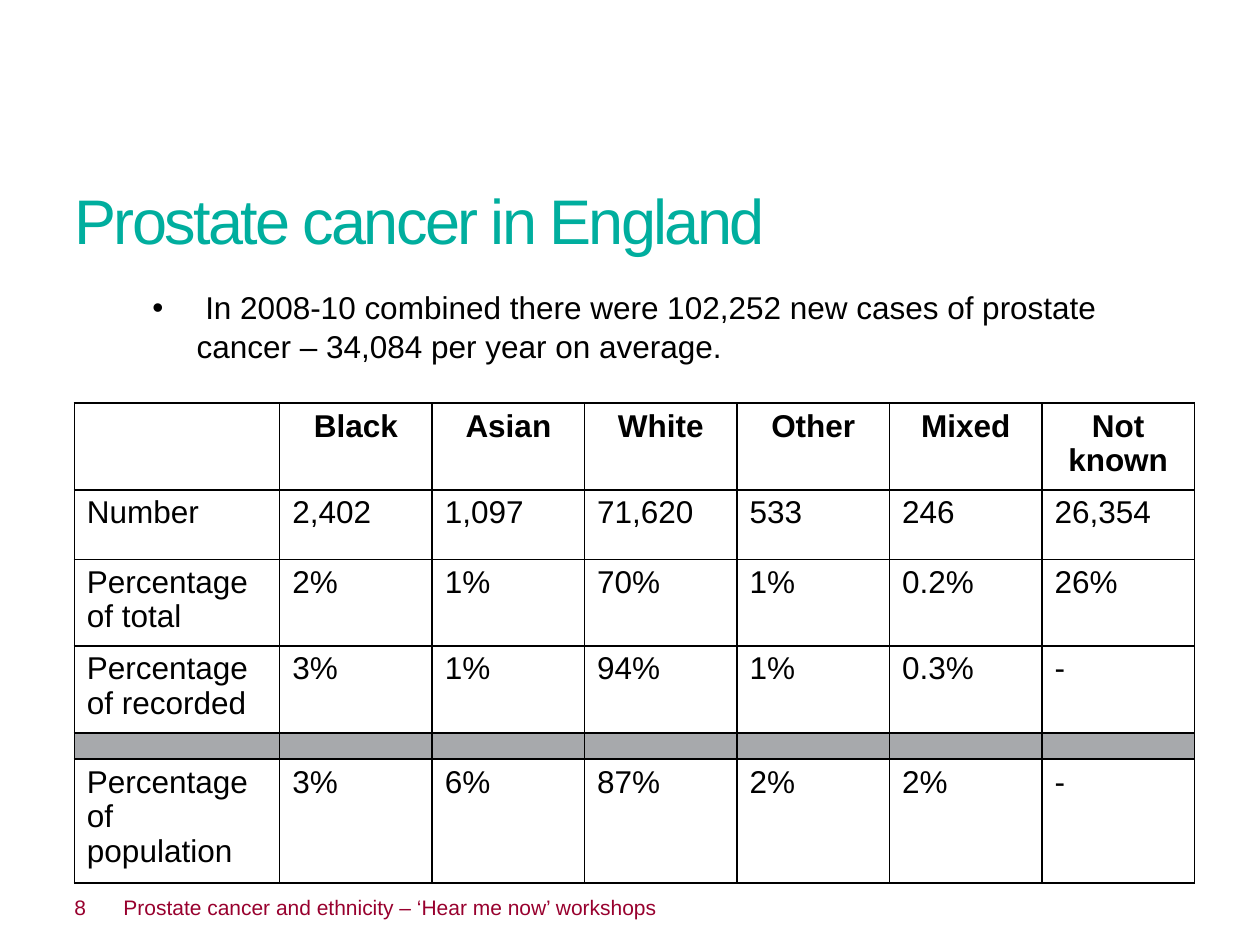
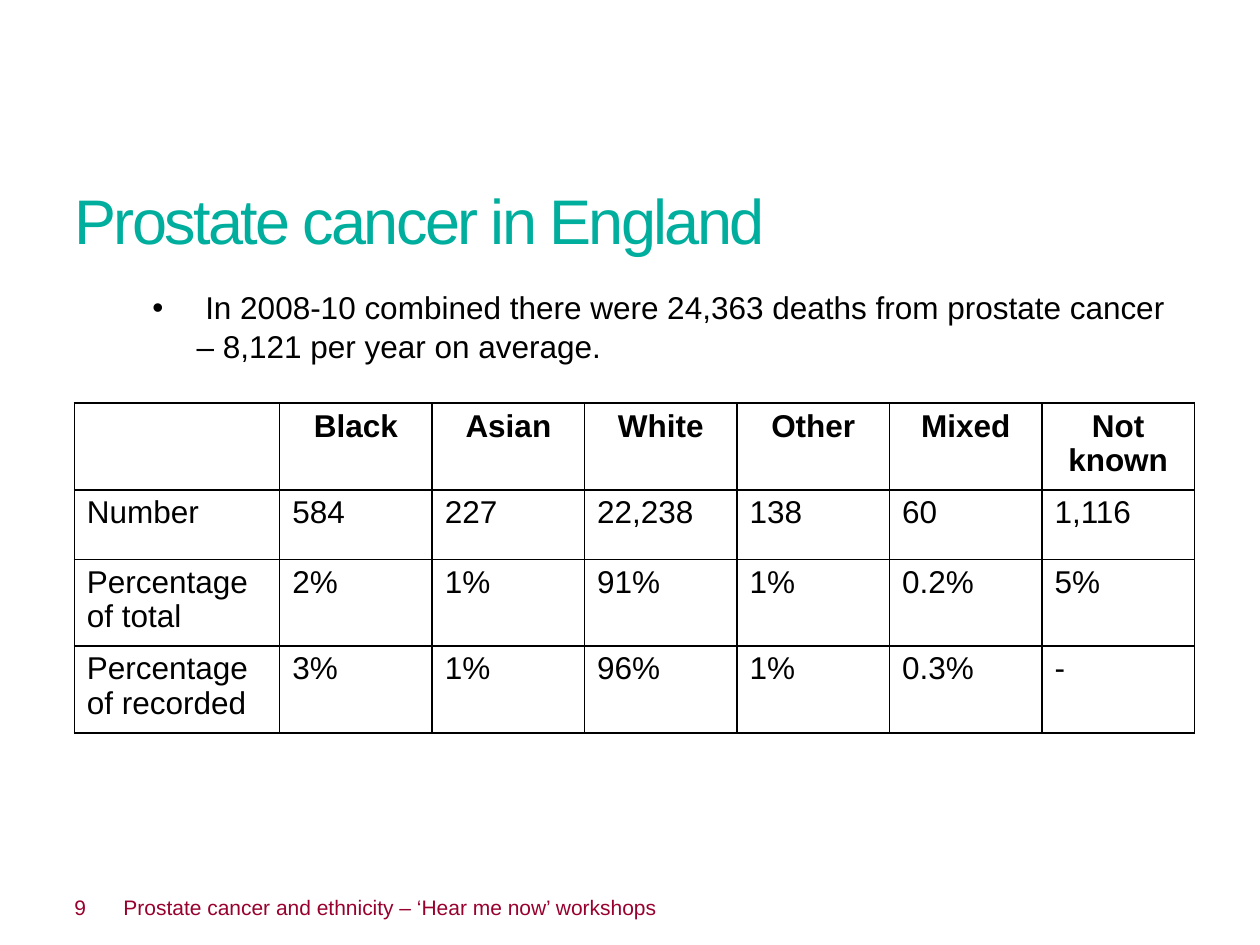
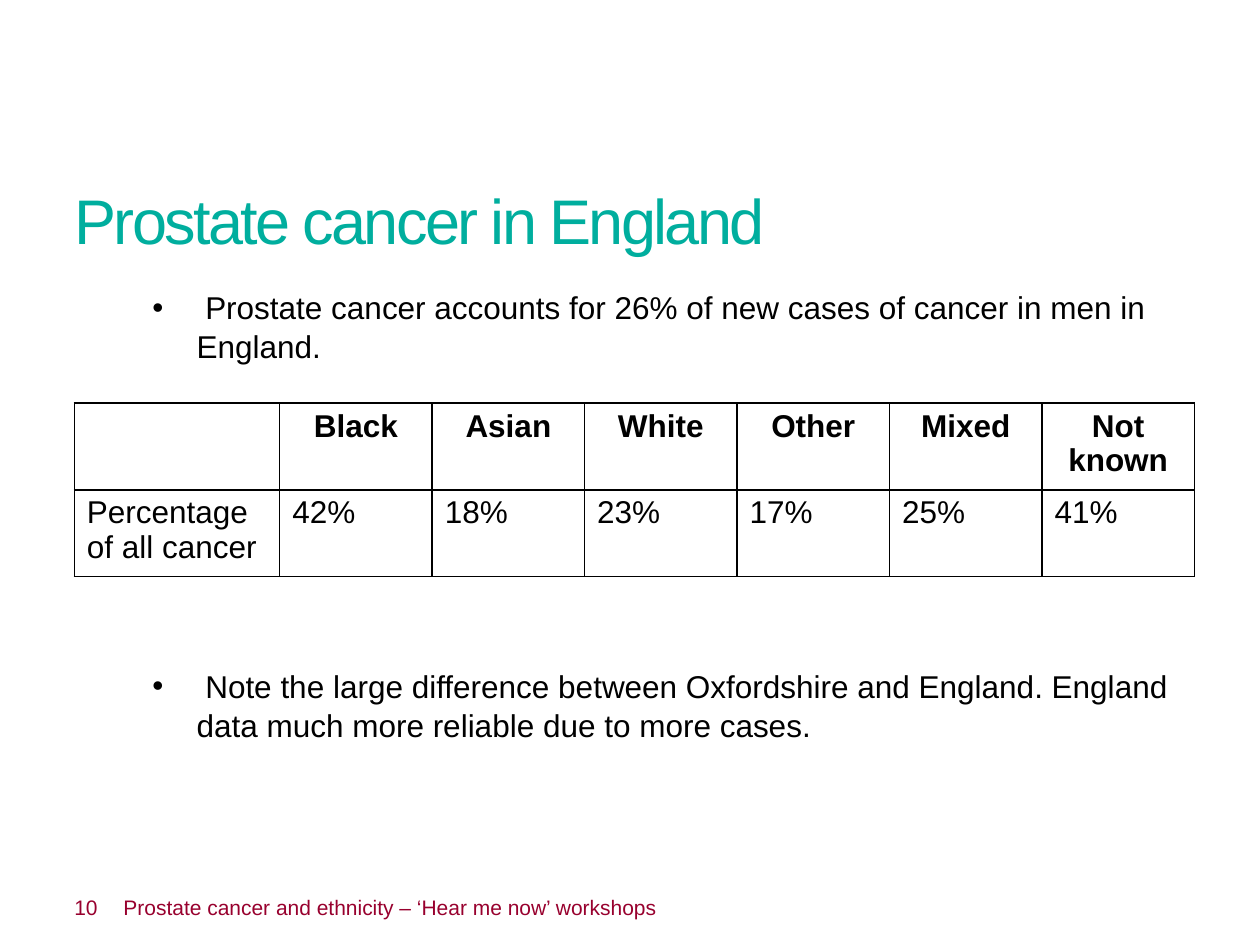
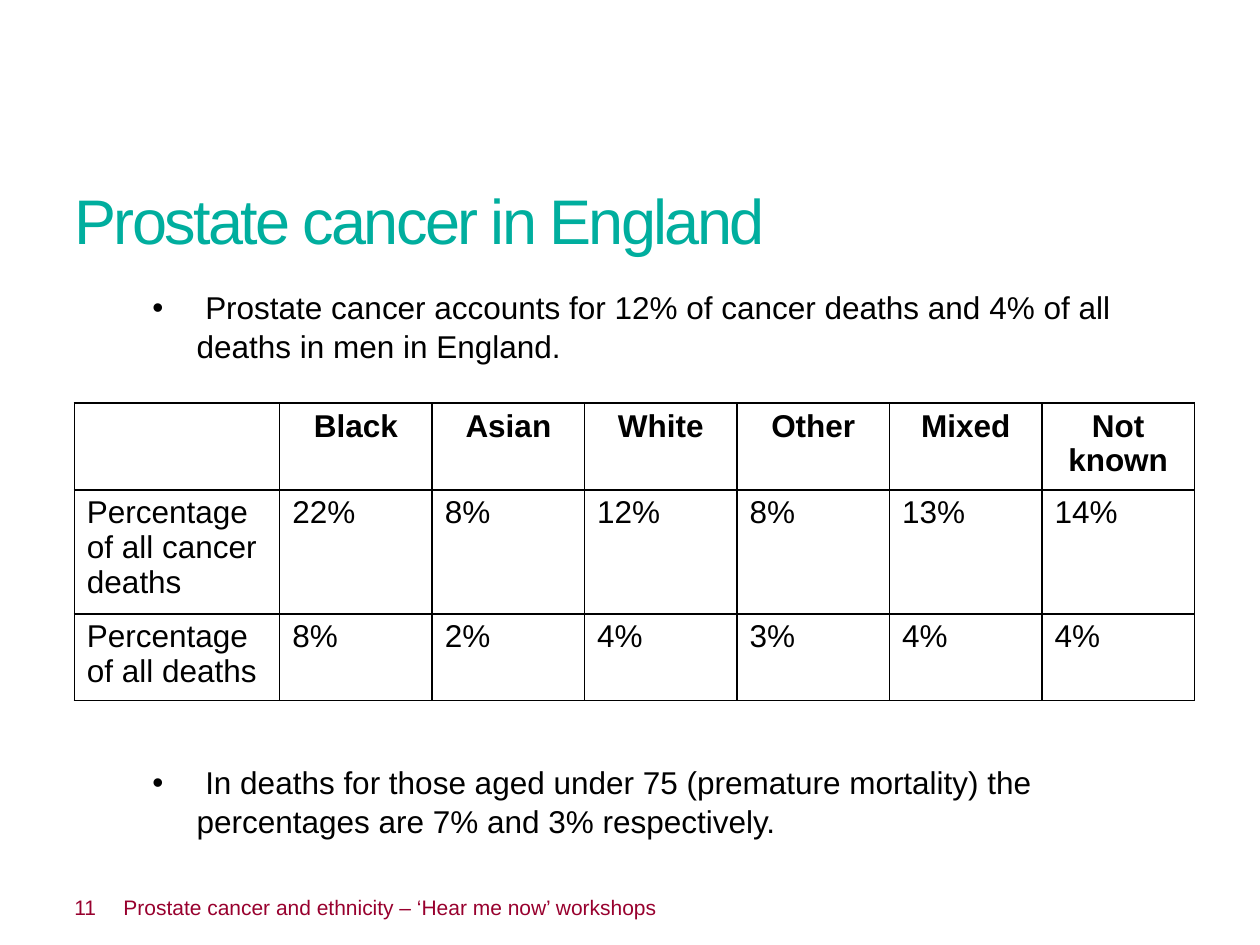
import pptx
import pptx.dml.color
import pptx.enum.shapes
import pptx.enum.text
import pptx.oxml.ns
import pptx.util
from lxml import etree

Inches, Pt = pptx.util.Inches, pptx.util.Pt
RGBColor = pptx.dml.color.RGBColor
PP_ALIGN = pptx.enum.text.PP_ALIGN
MSO_ANCHOR = pptx.enum.text.MSO_ANCHOR
qn = pptx.oxml.ns.qn

TEAL = RGBColor(0x00, 0xAE, 0x9E)
MAROON = RGBColor(0x98, 0x00, 0x2E)
BLACK = RGBColor(0x00, 0x00, 0x00)
WHITE = RGBColor(0xFF, 0xFF, 0xFF)
GREY = RGBColor(0xA7, 0xA9, 0xAC)
FONT = "Arial"

# Boxes: left, top, width, height
TITLE_BOX = (0.59, 1.39, 8.78, 0.71)
BODY_BOX = (0.61, 2.28, 8.78, 0.76)
TABLE_BOX = (0.59, 3.2, 8.89, 0)
FOOTER_BOX = (0, 6.9, 10, 0.6)

TITLE = "Prostate cancer in England"
FOOTER = "Prostate cancer and ethnicity – ‘Hear me now’ workshops"
GROUPS = ["", "Black", "Asian", "White", "Other", "Mixed", "Not known"]
LABEL_WIDTH = 1.63
LINE_HEIGHT = 0.28
CELL_PADDING = 0.1
MIN_ROW = 0.55
DIVIDER = [""] * len(GROUPS)
DIVIDER_HEIGHT = 0.21

# Each slide: number, bullets as (text, space before in points),
# table rows as (cells, lines of text in the label)
SLIDES = [
    (8,
     [(" In 2008-10 combined there were 102,252 new cases of prostate "
       "cancer – 34,084 per year on average.", 0)],
     [(["Number", "2,402", "1,097", "71,620", "533", "246", "26,354"], 1),
      (["Percentage of total", "2%", "1%", "70%", "1%", "0.2%", "26%"], 2),
      (["Percentage of recorded", "3%", "1%", "94%", "1%", "0.3%", "-"], 2),
      (DIVIDER, 0),
      (["Percentage of population", "3%", "6%", "87%", "2%", "2%", "-"], 2)]),
    (9,
     [(" In 2008-10 combined there were 24,363 deaths from prostate "
       "cancer – 8,121 per year on average.", 0)],
     [(["Number", "584", "227", "22,238", "138", "60", "1,116"], 1),
      (["Percentage of total", "2%", "1%", "91%", "1%", "0.2%", "5%"], 2),
      (["Percentage of recorded", "3%", "1%", "96%", "1%", "0.3%", "-"], 2)]),
    (10,
     [(" Prostate cancer accounts for 26% of new cases of cancer in men "
       "in England.", 0),
      (" Note the large difference between Oxfordshire and England. England "
       "data much more reliable due to more cases.", 172)],
     [(["Percentage of all cancer",
        "42%", "18%", "23%", "17%", "25%", "41%"], 2)]),
    (11,
     [(" Prostate cancer accounts for 12% of cancer deaths and 4% of all "
       "deaths in men in England.", 0),
      (" In deaths for those aged under 75 (premature mortality) the "
       "percentages are 7% and 3% respectively.", 227)],
     [(["Percentage of all cancer deaths",
        "22%", "8%", "12%", "8%", "13%", "14%"], 3),
      (["Percentage of all deaths", "8%", "2%", "4%", "3%", "4%", "4%"], 2)]),
]


def add_run(p, text, size, color, bold=False):
    r = p.add_run()
    r.text = text
    r.font.name = FONT
    r.font.size = Pt(size)
    r.font.bold = bold
    r.font.color.rgb = color
    return r


def set_frame(sp, anchor=MSO_ANCHOR.TOP, right=0):
    tf = sp.text_frame
    tf.word_wrap = True
    tf.vertical_anchor = anchor
    tf.margin_left = tf.margin_top = tf.margin_bottom = 0
    tf.margin_right = Inches(right)
    return tf


def add_text_box(slide, box, anchor=MSO_ANCHOR.TOP):
    return set_frame(slide.shapes.add_textbox(*map(Inches, box)), anchor)


def add_title(slide, box):
    p = add_text_box(slide, box).paragraphs[0]
    p.line_spacing = 1.08
    r = add_run(p, TITLE, 36, TEAL)
    r.font._element.set("spc", "-150")


def add_bullets(slide, box, bullets):
    tf = add_text_box(slide, box)
    for i, (text, before) in enumerate(bullets):
        p = tf.add_paragraph() if i else tf.paragraphs[0]
        pPr = p._p.get_or_add_pPr()
        pPr.set("marL", str(Inches(0.95)))
        pPr.set("indent", str(-Inches(0.35)))
        etree.SubElement(pPr, qn("a:buFont"), typeface=FONT)
        etree.SubElement(pPr, qn("a:buChar"), char="•")
        p.line_spacing = 1.03
        if before:
            p.space_before = Pt(before)
        add_run(p, text, 18, BLACK)


def set_borders(cell):
    tcPr = cell._tc.get_or_add_tcPr()
    for i, side in enumerate(("lnL", "lnR", "lnT", "lnB")):
        ln = etree.Element(qn("a:" + side), w=str(Pt(1)))
        fill = etree.SubElement(ln, qn("a:solidFill"))
        etree.SubElement(fill, qn("a:srgbClr"), val=str(BLACK))
        tcPr.insert(i, ln)


def fill_cell(cell, text, header, divider):
    if divider:
        cell.fill.solid()
        cell.fill.fore_color.rgb = GREY
    else:
        cell.fill.background()
    set_borders(cell)
    p = cell.text_frame.paragraphs[0]
    p.line_spacing = 0.98
    if header:
        p.alignment = PP_ALIGN.CENTER
    if text:
        add_run(p, text, 18, BLACK, header)
    else:
        # Small end mark keeps an empty row thin
        etree.SubElement(p._p, qn("a:endParaRPr"), sz="600")


def add_group_table(slide, box, body_rows):
    rows = [(GROUPS, 2)] + body_rows
    heights = [max(MIN_ROW, CELL_PADDING + LINE_HEIGHT * lines)
               if lines else DIVIDER_HEIGHT for _, lines in rows]
    left, top, width, _ = box
    frame = slide.shapes.add_table(
        len(rows), len(GROUPS), Inches(left), Inches(top),
        Inches(width), Inches(sum(heights)))
    table = frame.table
    table.first_row = table.horz_banding = False
    value_width = (width - LABEL_WIDTH) / (len(GROUPS) - 1)
    for i, column in enumerate(table.columns):
        column.width = Inches(value_width if i else LABEL_WIDTH)
    for i, (cells, _) in enumerate(rows):
        table.rows[i].height = Inches(heights[i])
        for j, text in enumerate(cells):
            fill_cell(table.cell(i, j), text, i == 0, cells is DIVIDER)


def add_footer(slide, box, number):
    # White band with the slide number
    left, top, width, height = box
    sp = slide.shapes.add_shape(
        pptx.enum.shapes.MSO_SHAPE.RECTANGLE, *map(Inches, box))
    sp.shadow.inherit = False
    sp.fill.solid()
    sp.fill.fore_color.rgb = WHITE
    sp.line.fill.background()
    p = set_frame(sp, MSO_ANCHOR.MIDDLE, right=0.1).paragraphs[0]
    p.alignment = PP_ALIGN.LEFT
    p._p.get_or_add_pPr().set("marL", str(Inches(0.59)))
    add_run(p, str(number), 12, MAROON)
    # Presentation name
    name_box = (left + 0.98, top, width - 1.57, height)
    tf = add_text_box(slide, name_box, MSO_ANCHOR.MIDDLE)
    add_run(tf.paragraphs[0], FOOTER, 12, MAROON)


def add_data_slide(prs, number, bullets, rows):
    slide = prs.slides.add_slide(prs.slide_layouts[6])
    slide.background.fill.solid()
    slide.background.fill.fore_color.rgb = WHITE
    add_title(slide, TITLE_BOX)
    add_bullets(slide, BODY_BOX, bullets)
    add_footer(slide, FOOTER_BOX, number)
    add_group_table(slide, TABLE_BOX, rows)


def main():
    prs = pptx.Presentation()
    prs.slide_width = Inches(10)
    prs.slide_height = Inches(7.5)
    for number, bullets, rows in SLIDES:
        add_data_slide(prs, number, bullets, rows)
    prs.save("out.pptx")


if __name__ == "__main__":
    main()
